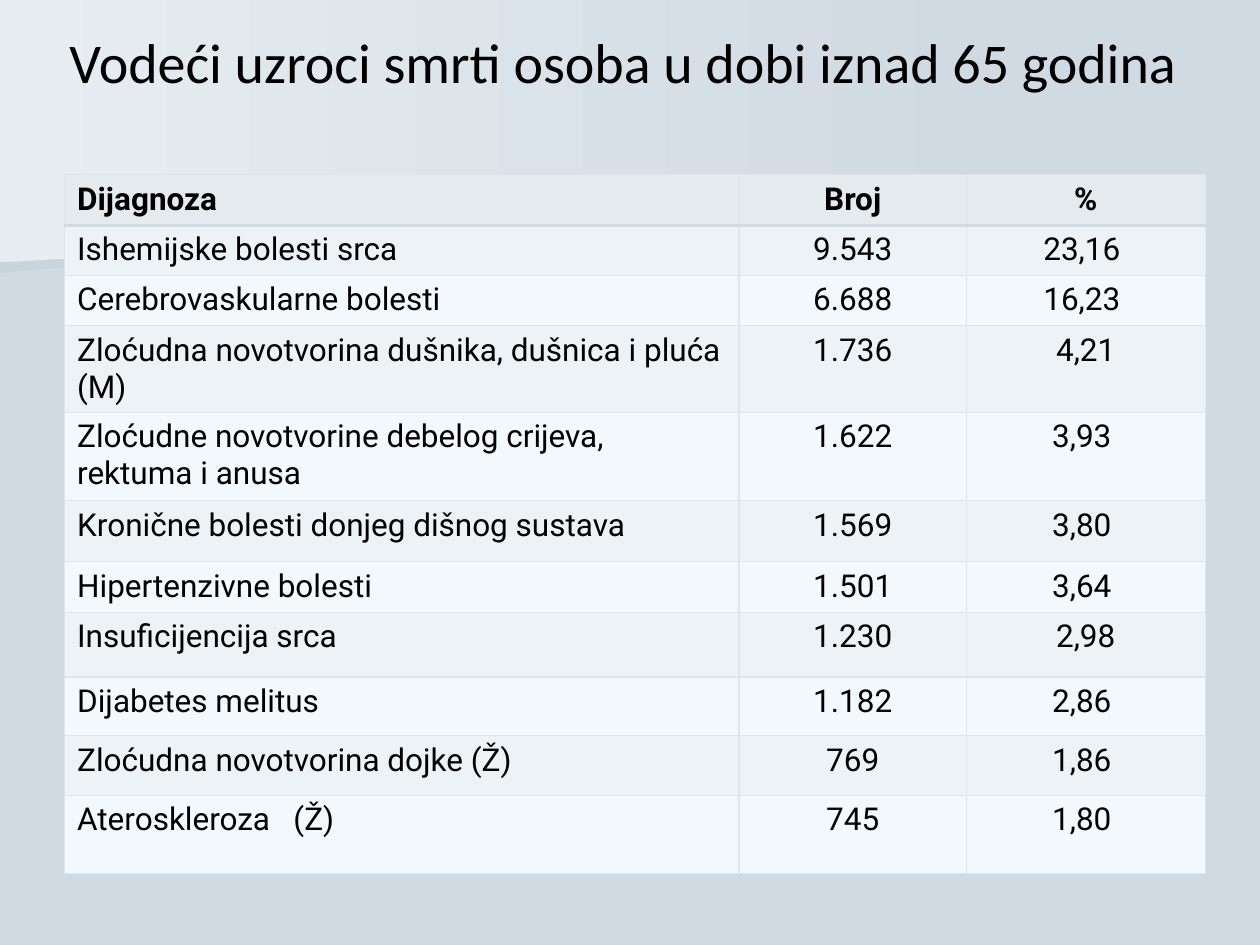
from lxml import etree
from pptx import Presentation
from pptx.dml.color import RGBColor
from pptx.enum.text import MSO_ANCHOR, PP_ALIGN
from pptx.oxml.ns import qn
from pptx.util import Pt

LEFT, CENTER = PP_ALIGN.LEFT, PP_ALIGN.CENTER
MIDDLE = MSO_ANCHOR.MIDDLE

BLACK = RGBColor(0x00, 0x00, 0x00)
BACKGROUND = RGBColor(0xD0, 0xDA, 0xE2)
SHADE = RGBColor(0xCB, 0xD4, 0xDC)
LIGHT = RGBColor(0xE7, 0xED, 0xF1)
HEADER = RGBColor(0xE4, 0xEA, 0xEE)
BAND = RGBColor(0xED, 0xF2, 0xF6)
PLAIN = RGBColor(0xF3, 0xF8, 0xFC)
GRID = RGBColor(0xDF, 0xE5, 0xE9)

COL_WIDTHS = [385.4, 129.9, 136.5]
ROW_HEIGHTS = [28.8, 28.8, 28.8, 49.5, 50.4, 35, 28.8, 37, 33.5, 34, 44.6]
ROWS = [
    ("Dijagnoza", "Broj", "%"),
    ("Ishemijske bolesti srca", "9.543", "23,16 "),
    ("Cerebrovaskularne bolesti", "6.688", "16,23 "),
    ("Zloćudna novotvorina dušnika, dušnica i pluća (M)", "1.736", "4,21"),
    ("Zloćudne novotvorine debelog crijeva, rektuma i anusa", "1.622", "3,93 "),
    ("Kronične bolesti donjeg dišnog sustava", "1.569", "3,80 "),
    ("Hipertenzivne bolesti", "1.501", "3,64 "),
    ("Insuficijencija srca", "1.230", "2,98"),
    ("Dijabetes melitus", "1.182", "2,86 "),
    ("Zloćudna novotvorina dojke (Ž)", "769", "1,86 "),
    ("Ateroskleroza   (Ž)", "745", "1,80 "),
]


class SlideBuilder:
    """Holds the text style and the current slide."""

    title_font, title_size = "Calibri", 32
    body_font, body_size = "Roboto", 18

    def __init__(self, s):
        self.s = s

    def background(self, color):
        fill = self.s.background.fill
        fill.solid()
        fill.fore_color.rgb = color

    def add_text(self, tf, text, font, size, align, bold=False):
        p = tf.paragraphs[0]
        p.alignment = align
        r = p.add_run()
        r.text = text
        r.font.name, r.font.size, r.font.bold = font, Pt(size), bold
        r.font.color.rgb = BLACK

    def gradient_shape(self, points, start, end):
        builder = self.s.shapes.build_freeform(*points[0], scale=Pt(1))
        builder.add_line_segments(points[1:], close=True)
        sp = builder.convert_to_shape()
        sp.shadow.inherit = False
        sp.line.fill.background()
        sp.fill.gradient()
        sp.fill.gradient_angle = 0
        for stop, color in zip(sp.fill.gradient_stops, (start, end)):
            stop.color.rgb = color

    def title(self, text, left, top, width, height):
        sp = self.s.shapes.title
        sp.left, sp.top, sp.width, sp.height = map(Pt, (left, top, width, height))
        sp.text_frame.vertical_anchor = MIDDLE
        self.add_text(sp.text_frame, text, self.title_font, self.title_size, CENTER)
        # Bring the title in front of the backdrop
        self.s.shapes._spTree.append(sp._element)

    def border(self, cell, side, color, width):
        ln = etree.SubElement(cell._tc.get_or_add_tcPr(), qn(f"a:ln{side}"), w=str(Pt(width)))
        fill = etree.SubElement(ln, qn("a:solidFill"))
        etree.SubElement(fill, qn("a:srgbClr"), val=str(color))

    def cell(self, cell, text, row, col):
        cell.margin_left = cell.margin_right = Pt(7.2)
        cell.margin_top = cell.margin_bottom = Pt(3.6)
        self.add_text(cell.text_frame, text, self.body_font, self.body_size,
                      CENTER if col else LEFT, bold=row == 0)
        for side in "LRTB":
            under_header = (row, side) in ((0, "B"), (1, "T"))
            self.border(cell, side, *((BACKGROUND, 2) if under_header else (GRID, 0.75)))
        cell.fill.solid()
        cell.fill.fore_color.rgb = HEADER if row == 0 else BAND if row % 2 else PLAIN

    def table(self, rows, left, top, widths, heights):
        frame = self.s.shapes.add_table(len(rows), len(widths), Pt(left), Pt(top),
                                        Pt(sum(widths)), Pt(sum(heights)))
        tbl = frame.table
        tbl.horz_banding = False
        for column, width in zip(tbl.columns, widths):
            column.width = Pt(width)
        for i, (row, height) in enumerate(zip(rows, heights)):
            tbl.rows[i].height = Pt(height)
            for j, text in enumerate(row):
                self.cell(tbl.cell(i, j), text, i, j)


def main():
    prs = Presentation()
    prs.slide_width, prs.slide_height = Pt(720), Pt(540)
    slide = SlideBuilder(prs.slides.add_slide(prs.slide_layouts[5]))

    # Backdrop: a darker edge under a light panel
    slide.background(BACKGROUND)
    slide.gradient_shape([(560.2, 110.2), (0, 156.2), (0, 72.7), (560.9, 72.7), (560.2, 92.2)],
                         SHADE, BACKGROUND)
    slide.gradient_shape([(570.2, 116.6), (0, 149.8), (0, 0), (570.2, 0)], LIGHT, BACKGROUND)

    # Title and table of causes of death
    slide.title("Vodeći uzroci smrti osoba u dobi iznad 65 godina ", 8.6, 3.6, 702.7, 62.6)
    slide.table(ROWS, 36.9, 99.8, COL_WIDTHS, ROW_HEIGHTS)

    prs.save("out.pptx")


if __name__ == "__main__":
    main()
